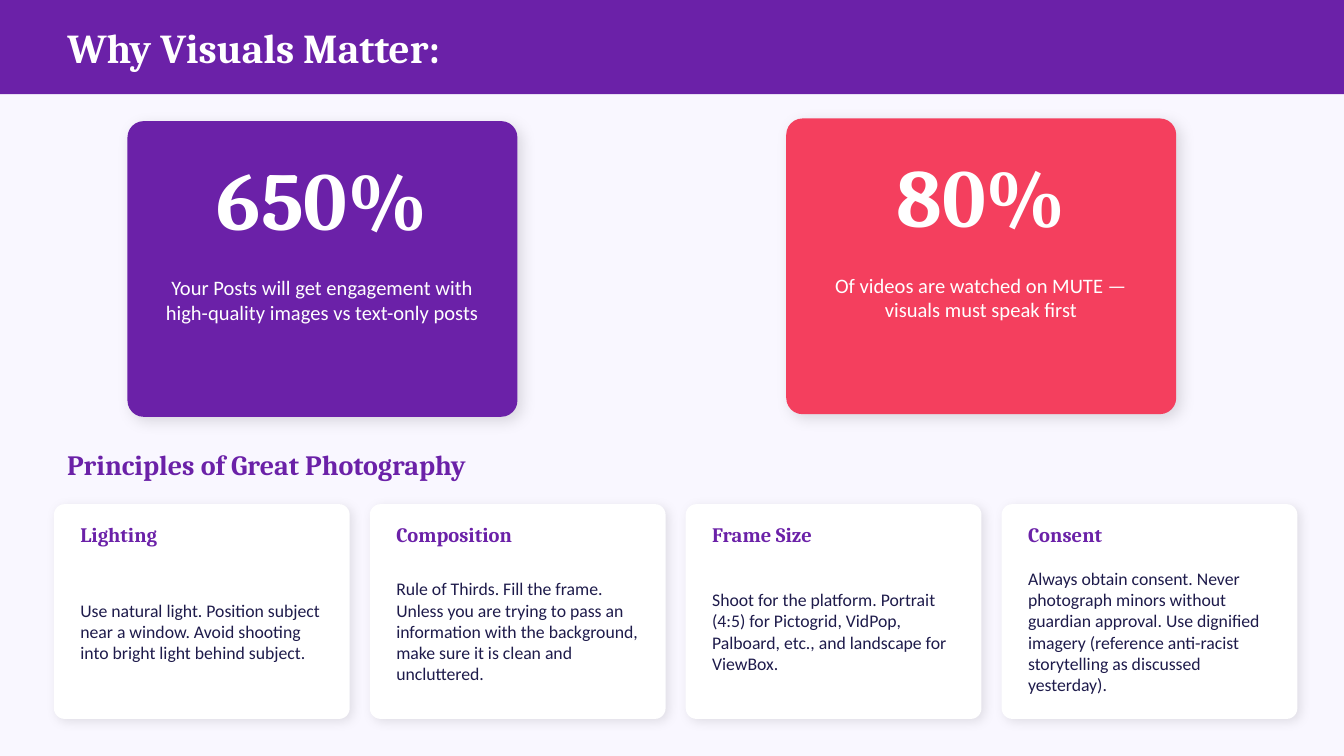
from lxml import etree
from pptx import Presentation
from pptx.dml.color import RGBColor
from pptx.enum import shapes, text
from pptx.oxml import ns
from pptx.util import Cm, Pt

HUES = {
    "page": "F9F7FF",
    "plum": "6B21A8",
    "rose": "F43F5E",
    "white": "FFFFFF",
    "ink": "1E1B4B",
    "shade": "000000",
}
HEAD, BODY = "Cambria", "Calibri"
LEFT, MID = text.PP_ALIGN.LEFT, text.PP_ALIGN.CENTER

# left, top, fill, figure, caption
STATS = [
    (2.41, 2.29, "plum", "650%",
     "Your Posts will get engagement with high-quality images vs text-only posts"),
    (14.86, 2.24, "rose", "80%",
     "Of videos are watched on MUTE — visuals must speak first"),
]
RULES = [
    ("Lighting",
     "Use natural light. Position subject near a window. "
     "Avoid shooting into bright light behind subject."),
    ("Composition",
     "Rule of Thirds. Fill the frame. Unless you are trying to pass an "
     "information with the background, make sure it is clean and uncluttered."),
    ("Frame Size",
     "Shoot for the platform. Portrait (4:5) for Pictogrid, VidPop, "
     "Palboard, etc., and landscape for ViewBox."),
    ("Consent",
     "Always obtain consent. Never photograph minors without guardian approval. "
     "Use dignified imagery (reference anti-racist storytelling as discussed "
     "yesterday)."),
]


def hue(name):
    return RGBColor.from_string(HUES[name])


def place(shape, left, top, width, height):
    shape.left, shape.top = Cm(left), Cm(top)
    shape.width, shape.height = Cm(width), Cm(height)


def write(shape, words, size, color, font=BODY, bold=False, align=LEFT, top=False):
    """Fill a shape with one paragraph, set in the middle unless top is true."""
    frame = shape.text_frame
    frame.word_wrap = True
    frame.auto_size = text.MSO_AUTO_SIZE.NONE
    frame.vertical_anchor = text.MSO_ANCHOR.TOP if top else text.MSO_ANCHOR.MIDDLE
    para = frame.paragraphs[0]
    para.alignment = align
    run = para.add_run()
    run.text = words
    run.font.name, run.font.size, run.font.bold = font, Pt(size), bold
    run.font.color.rgb = hue(color)


def label(slide, box, words, size, color, **style):
    shape = slide.shapes.add_textbox(*map(Cm, box))
    write(shape, words, size, color, **style)


def panel(slide, kind, box, fill):
    shape = slide.shapes.add_shape(kind, *map(Cm, box))
    shape.fill.solid()
    shape.fill.fore_color.rgb = hue(fill)
    shape.line.fill.background()
    shape.shadow.inherit = False
    return shape


def shade(shape, alpha, blur, dist):
    """Cast a soft shadow down and right; alpha in percent, lengths in points."""
    effects = shape._element.spPr.find(ns.qn("a:effectLst"))
    outer = etree.SubElement(
        effects, ns.qn("a:outerShdw"), blurRad=str(Pt(blur)), dist=str(Pt(dist)),
        dir="2700000", algn="bl", rotWithShape="0")
    color = etree.SubElement(outer, ns.qn("a:srgbClr"), val=HUES["shade"])
    etree.SubElement(color, ns.qn("a:alpha"), val=str(alpha * 1000))


def card(slide, box, fill, round_by, *shadow):
    shape = panel(slide, shapes.MSO_SHAPE.ROUNDED_RECTANGLE, box, fill)
    shape.adjustments[0] = round_by
    shade(shape, *shadow)


def banner(slide, words):
    panel(slide, shapes.MSO_SHAPE.RECTANGLE, (0, 0, 25.4, 1.78), "plum")
    title = slide.shapes.title
    slide.shapes._spTree.append(title._element)  # bring above the bar
    place(title, 1.02, 0, 23.37, 1.78)
    write(title, words, 22, "white", font=HEAD, bold=True)


def stat(slide, left, top, fill, figure, caption):
    card(slide, (left, top, 7.37, 5.59), fill, 0.055, 12, 8, 3)
    label(slide, (left, top + 0.24, 7.37, 2.41), figure, 44, "white",
          font=HEAD, bold=True, align=MID)
    label(slide, (left + 0.25, top + 2.79, 6.86, 2.54), caption, 11, "white",
          align=MID, top=True)


def rule(slide, left, name, advice):
    card(slide, (left, 9.53, 5.59, 4.06), "white", 0.05, 10, 6, 2)
    label(slide, (left + 0.25, 9.7, 5.08, 0.81), name, 11, "plum",
          font=HEAD, bold=True)
    label(slide, (left + 0.25, 10.54, 5.08, 2.79), advice, 9.5, "ink")


def main():
    deck = Presentation()
    deck.slide_width, deck.slide_height = Cm(25.4), Cm(14.29)
    slide = deck.slides.add_slide(deck.slide_layouts[5])
    slide.background.fill.solid()
    slide.background.fill.fore_color.rgb = hue("page")

    banner(slide, "Why Visuals Matter:")
    for item in STATS:
        stat(slide, *item)
    label(slide, (1.02, 8.26, 23.37, 1.02), "Principles of Great Photography",
          15, "plum", font=HEAD, bold=True)
    for col, (name, advice) in enumerate(RULES):
        rule(slide, 1.02 + col * 5.97, name, advice)
    deck.save("out.pptx")


if __name__ == "__main__":
    main()
